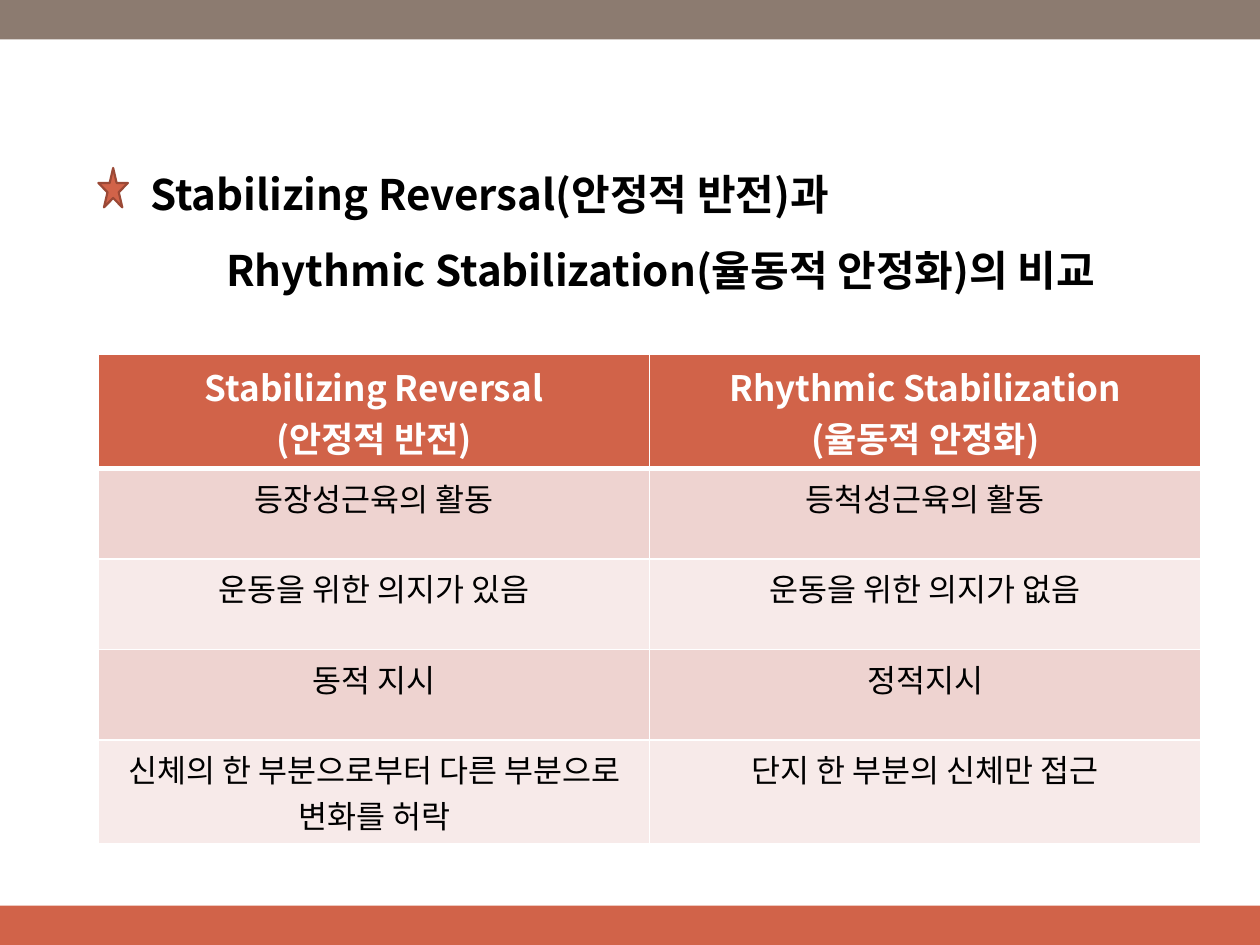
from lxml import etree
from pptx import Presentation
from pptx.dml.color import RGBColor
from pptx.enum.shapes import MSO_SHAPE
from pptx.enum.text import PP_ALIGN
from pptx.oxml.ns import qn
from pptx.util import Pt

RECT = MSO_SHAPE.RECTANGLE
STAR = MSO_SHAPE.STAR_5_POINT
MID = PP_ALIGN.CENTER
FACE = "Noto Sans CJK KR"
RUST, BROWN, EDGE = "D16349", "8C7B70", "9B4936"
WHITE, BLACK = "FFFFFF", "000000"
BANDS = ["EED3D0", "F7EAE9"]

TITLE = {"size": Pt(24), "bold": True}
HEAD = {"size": Pt(20), "bold": True}
BODY = {"size": Pt(18), "bold": False}

ROWS = [
    (["Stabilizing Reversal", "(안정적 반전)"],
     ["Rhythmic Stabilization", "(율동적 안정화)"]),
    (["등장성근육의 활동"], ["등척성근육의 활동"]),
    (["운동을 위한 의지가 있음"], ["운동을 위한 의지가 없음"]),
    (["동적 지시"], ["정적지시"]),
    (["신체의 한 부분으로부터 다른 부분으로", "변화를 허락"],
     ["단지 한 부분의 신체만 접근"]),
]


def paint(fill, tone):
    fill.solid()
    fill.fore_color.rgb = RGBColor.from_string(tone)


def write(frame, lines, style, tone, layout):
    for i, line in enumerate(lines):
        para = frame.paragraphs[0] if i == 0 else frame.add_paragraph()
        for key, value in layout.items():
            setattr(para, key, value)
        run = para.add_run()
        run.text = line
        for key, value in style.items():
            setattr(run.font, key, value)
        paint(run.font.fill, tone)
        run.font.name = FACE
        east = etree.SubElement(run.font._element, qn("a:ea"))
        east.set("typeface", FACE)


def draw(slide, kind, box, tone):
    shape = slide.shapes.add_shape(kind, *map(Pt, box))
    shape.shadow.inherit = False
    paint(shape.fill, tone)
    shape.line.fill.background()
    return shape


def frame_page(slide, box):
    left, top, width, height = box
    band = 22.5
    draw(slide, RECT, (left, top + height - band, width, band), RUST)
    draw(slide, RECT, (left, top, width, band), BROWN)


def add_title(slide, box):
    left, top, width, height = box
    star = draw(slide, STAR, (left, top + 17.5, 16.9, 22.5), RUST)
    paint(star.line.fill, EDGE)
    star.line.width = Pt(1.25)
    area = slide.shapes.add_textbox(
        Pt(left + 22.5), Pt(top), Pt(width - 22.5), Pt(height))
    frame = area.text_frame
    frame.word_wrap = True
    lines = ["Stabilizing Reversal(안정적 반전)과",
             "Rhythmic Stabilization(율동적 안정화)의 비교"]
    write(frame, lines, TITLE, BLACK, {"line_spacing": 1.5})
    props = frame.paragraphs[1]._p.get_or_add_pPr()
    props.set("marL", str(Pt(43.5)))


def edge(cell, sides):
    props = cell._tc.get_or_add_tcPr()
    for side, width in sides.items():
        line = etree.SubElement(props, qn("a:ln" + side), w=str(Pt(width)))
        fill = etree.SubElement(line, qn("a:solidFill"))
        etree.SubElement(fill, qn("a:srgbClr"), val=WHITE)


def add_grid(slide, box):
    shape = slide.shapes.add_table(len(ROWS), 2, *map(Pt, box))
    table = shape.table
    for col in table.columns:
        col.width = Pt(box[2] / 2)
    for r, row in enumerate(ROWS):
        table.rows[r].height = Pt(box[3] / len(ROWS))
        top = r == 0
        style, tone = (HEAD, WHITE) if top else (BODY, BLACK)
        for c, lines in enumerate(row):
            cell = table.cell(r, c)
            edge(cell, {"L": 1, "R": 1, "T": 1, "B": 3 if top else 1})
            paint(cell.fill, RUST if top else BANDS[(r - 1) % 2])
            write(cell.text_frame, lines, style, tone, {"alignment": MID})


def main():
    deck = Presentation()
    deck.slide_width, deck.slide_height = Pt(720), Pt(540)
    slide = deck.slides.add_slide(deck.slide_layouts[6])
    frame_page(slide, (0, 0, 720, 540))
    add_grid(slide, (56.25, 202.5, 630, 258.5))
    add_title(slide, (56.25, 78.5, 596.5, 90))
    deck.save("out.pptx")


if __name__ == "__main__":
    main()
